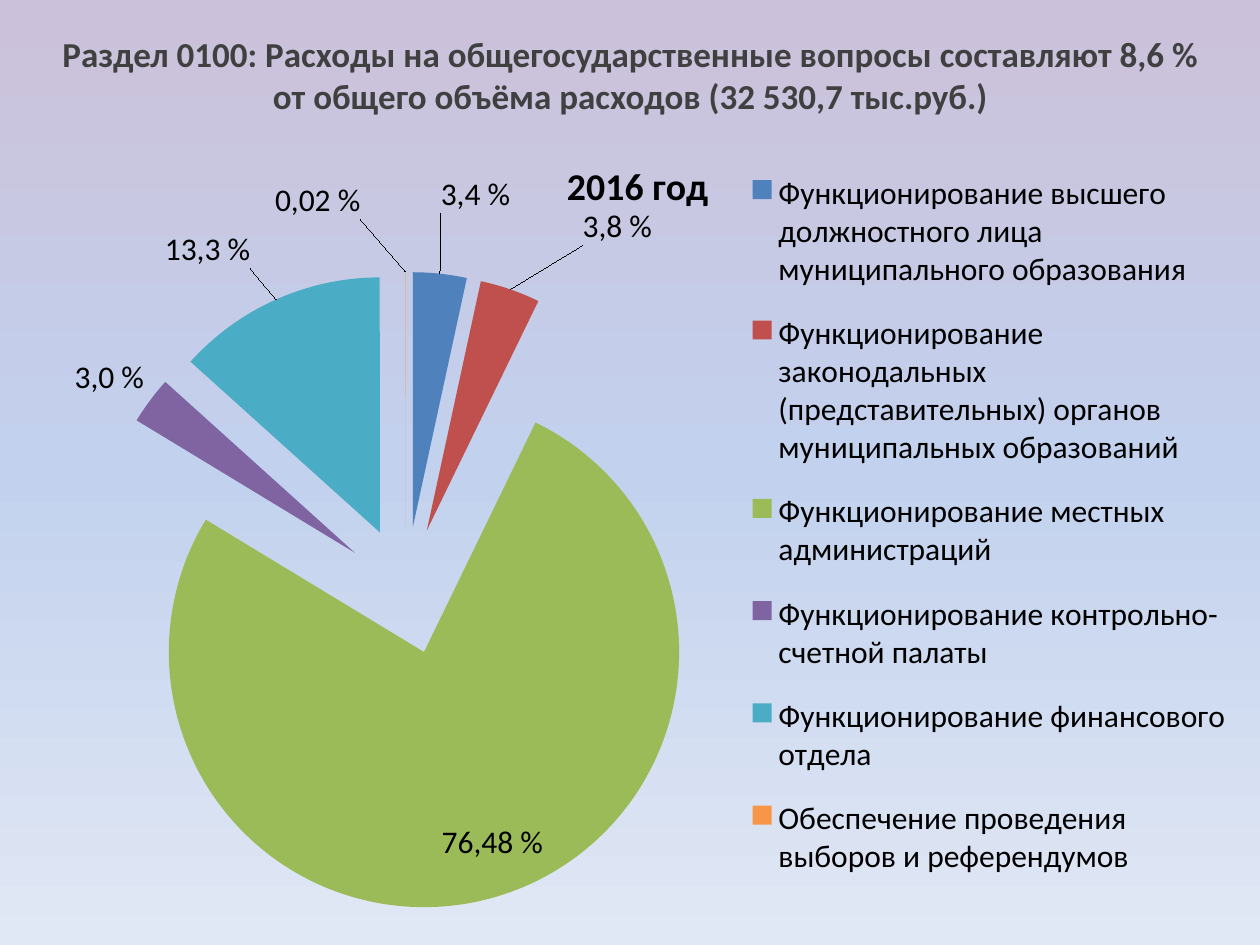
import copy

import pptx
import pptx.chart.data
import pptx.dml.color
import pptx.enum.chart
import pptx.enum.text
import pptx.oxml
import pptx.oxml.ns
import pptx.util

SCALE = 914400 / 126
FONT = "Calibri"
CHART = (25, 116, 1221, 814)
TITLE = ("Раздел 0100: Расходы на общегосударственные вопросы составляют 8,6 % "
         "от общего объёма расходов (32 530,7 тыс.руб.)")
YEAR = "2016 год"
OUT = pptx.enum.chart.XL_LABEL_POSITION.OUTSIDE_END
IN = pptx.enum.chart.XL_LABEL_POSITION.INSIDE_END
SLICES = [
    ("Функционирование высшего должностного лица муниципального образования",
     3.4, "4F81BD", "3,4 %", OUT, (0, -53)),
    ("Функционирование законодальных (представительных) органов муниципальных образований",
     3.8, "C0504D", "3,8 %", OUT, (70, -37)),
    ("Функционирование местных администраций",
     76.48, "9BBB59", "76,48 %", IN, (49, -28)),
    ("Функционирование контрольно-счетной палаты",
     3, "8064A2", "3,0 %", OUT, None),
    ("Функционирование финансового отдела",
     13.3, "4BACC6", "13,3 %", OUT, (-23, -24)),
    ("Обеспечение проведения выборов и референдумов",
     0.02, "F79646", "0,02 %", OUT, (-88, -45)),
]


def px(n):
    return pptx.util.Emu(round(n * SCALE))


def rgb(value):
    return pptx.dml.color.RGBColor.from_string(value)


def style(font, size, color, bold=False):
    font.name = FONT
    font.size = pptx.util.Pt(size)
    font.bold = bold
    font.color.rgb = rgb(color)


def add_run(p, text, size, color, bold=False):
    r = p.add_run()
    r.text = text
    style(r.font, size, color, bold)


def chart_element(tag, **attrs):
    el = pptx.oxml.parse_xml(f"<c:{tag} {pptx.oxml.ns.nsdecls('c')}/>")
    for name, value in attrs.items():
        el.set(name, str(value))
    return el


def set_layout(parent, index, values, *modes):
    for old in parent.xpath("./c:layout"):
        parent.remove(old)
    layout, manual = chart_element("layout"), chart_element("manualLayout")
    layout.append(manual)
    for tag, val in modes:
        manual.append(chart_element(tag, val=val))
    for tag, val, total in zip("xywh", values, CHART[2:] * 2):
        manual.append(chart_element(tag, val=round(val / total, 4)))
    parent.insert(index, layout)


def place(parent, index, left, top, *size, inner=False):
    modes = [("layoutTarget", "inner")] if inner else []
    modes += [("xMode", "edge"), ("yMode", "edge")]
    set_layout(parent, index, (left - CHART[0], top - CHART[1], *size), *modes)


def set_background(s, colors):
    fill = s.background.fill
    fill.gradient()
    fill.gradient_angle = 270
    stops = s.element.xpath(".//a:gsLst")[0]
    stops.insert(1, copy.deepcopy(stops[0]))
    for i, (stop, color) in enumerate(zip(fill.gradient_stops, colors)):
        stop.position = i / (len(colors) - 1)
        stop.color.rgb = rgb(color)


def add_title(s):
    sp = s.shapes.title
    sp.left, sp.top, sp.width, sp.height = map(px, (35, 26, 1191, 69))
    tf = sp.text_frame
    tf.word_wrap = True
    tf.auto_size = pptx.enum.text.MSO_AUTO_SIZE.NONE
    tf.vertical_anchor = pptx.enum.text.MSO_ANCHOR.TOP
    p = tf.paragraphs[0]
    p.alignment = pptx.enum.text.PP_ALIGN.CENTER
    add_run(p, TITLE, 20, "404040", True)


def format_slice(series, i, color, text, position, offset):
    point = series.points[i]
    point.format.fill.solid()
    point.format.fill.fore_color.rgb = rgb(color)
    label = point.data_label
    add_run(label.text_frame.paragraphs[0], text, 18, "000000")
    label.position = position
    if offset:
        dlbl = series.data_labels._element.xpath(f"./c:dLbl[c:idx/@val={i}]")[0]
        set_layout(dlbl, 1, offset)


def add_pie(s):
    data = pptx.chart.data.CategoryChartData()
    data.categories = [item[0] for item in SLICES]
    data.add_series(YEAR, [item[1] for item in SLICES])
    kind = pptx.enum.chart.XL_CHART_TYPE.PIE
    chart = s.shapes.add_chart(kind, *map(px, CHART), data).chart
    style(chart.font, 18, "000000")

    chart.has_title = True
    title = chart.chart_title
    add_run(title.text_frame.paragraphs[0], YEAR, 21.6, "000000", True)
    place(title._element, 1, 560, 152)

    chart.has_legend = True
    legend = chart.legend
    legend.position = pptx.enum.chart.XL_LEGEND_POSITION.CORNER
    legend.include_in_layout = False
    style(legend.font, 18, "000000")
    place(legend._element, 1, 745, 148, 488, 754)

    plot = chart.plots[0]
    plot.vary_by_categories = True
    place(plot._element.getparent(), 0, 87, 272, 638, 638, inner=True)
    series = plot.series[0]
    series._element.xpath("./c:tx")[0].addnext(chart_element("explosion", val=25))
    labels = series.data_labels
    labels.show_value = True
    style(labels.font, 18, "000000")
    for i, item in enumerate(SLICES):
        format_slice(series, i, *item[2:])


def main():
    prs = pptx.Presentation()
    prs.slide_width, prs.slide_height = px(1260), px(945)
    s = prs.slides.add_slide(prs.slide_layouts[5])
    set_background(s, ["CCC1DA", "C2D1ED", "E1E8F5"])
    add_title(s)
    add_pie(s)
    prs.save("out.pptx")


if __name__ == "__main__":
    main()
